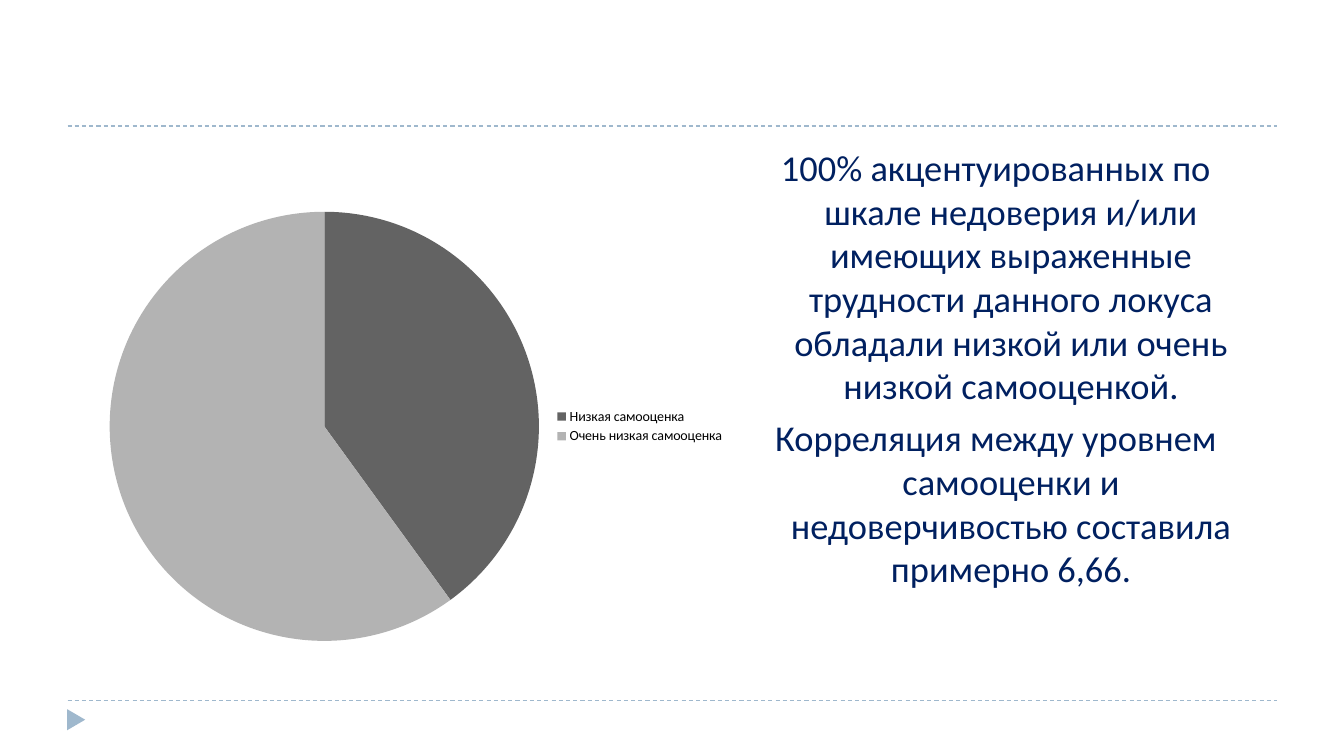
from lxml import etree
from pptx import Presentation
from pptx.chart.data import CategoryChartData
from pptx.dml.color import RGBColor
from pptx.enum.chart import XL_CHART_TYPE, XL_LEGEND_POSITION
from pptx.enum.dml import MSO_LINE
from pptx.enum.shapes import MSO_CONNECTOR, MSO_SHAPE
from pptx.enum.text import PP_ALIGN
from pptx.oxml.ns import qn
from pptx.util import Inches, Pt

PIE = XL_CHART_TYPE.PIE
LEGEND_RIGHT = XL_LEGEND_POSITION.RIGHT
DASH = MSO_LINE.DASH
STRAIGHT = MSO_CONNECTOR.STRAIGHT
TRIANGLE = MSO_SHAPE.ISOSCELES_TRIANGLE
CENTER = PP_ALIGN.CENTER

FONT = "Calibri"
ACCENT = "9FB8CD"
NAVY = "002060"
BLACK = "000000"
SLICES = [
    ("Низкая самооценка", 40, "636363"),
    ("Очень низкая самооценка", 60, "B3B3B3"),
]
FINDINGS = [
    "100% акцентуированных по шкале недоверия и/или имеющих выраженные "
    "трудности данного локуса обладали низкой или очень низкой самооценкой.",
    "Корреляция между уровнем самооценки и недоверчивостью составила примерно 6,66.",
]


def color(value):
    return RGBColor.from_string(value)


def format_font(font, size, font_color):
    for name, value in {"name": FONT, "size": Pt(size)}.items():
        setattr(font, name, value)
    font.color.rgb = color(font_color)


presentation = Presentation()
presentation.slide_width = Inches(13.33)
presentation.slide_height = Inches(7.5)
slide = presentation.slides.add_slide(presentation.slide_layouts[6])

# Dashed rules and the corner marker
for rule_top in (6.95, 1.25):
    rule = slide.shapes.add_connector(
        STRAIGHT, Inches(0.67), Inches(rule_top), Inches(12.67), Inches(rule_top))
    rule.line.color.rgb = color(ACCENT)
    rule.line.width = Pt(0.75)
    rule.line.dash_style = DASH
    etree.SubElement(rule._element.spPr, qn("a:effectLst"))

marker = slide.shapes.add_shape(
    TRIANGLE, Inches(0.65), Inches(7.05), Inches(0.21), Inches(0.18))
marker.rotation = 90
marker.shadow.inherit = False
marker.fill.solid()
marker.fill.fore_color.rgb = color(ACCENT)
marker.line.fill.background()

# Findings
findings = slide.shapes.add_textbox(
    Inches(7.25), Inches(1.39), Inches(5.26), Inches(5.4))
text_frame = findings.text_frame
text_frame.word_wrap = True
for index, finding in enumerate(FINDINGS):
    paragraph = text_frame.add_paragraph() if index else text_frame.paragraphs[0]
    paragraph.text = finding
    paragraph.alignment = CENTER
    paragraph.space_before = Pt(6 if index else 0)
    properties = paragraph._p.get_or_add_pPr()
    properties.set("marL", str(Inches(0.3)))
    properties.set("indent", str(Inches(-0.3)))
    format_font(paragraph.font, 26, NAVY)

# Self-esteem pie
chart_data = CategoryChartData()
chart_data.categories = [name for name, share, fill in SLICES]
chart_data.add_series("Series 1", [share for name, share, fill in SLICES])
chart = slide.shapes.add_chart(
    PIE, Inches(0.95), Inches(1.95), Inches(6.34), Inches(4.56), chart_data).chart
chart.has_title = False
chart.has_legend = True
chart.legend.position = LEGEND_RIGHT
chart.legend.include_in_layout = False
format_font(chart.font, 10, BLACK)
plot = chart.plots[0]
plot.vary_by_categories = True
for index, (name, share, fill) in enumerate(SLICES):
    point_format = plot.series[0].points[index].format
    point_format.fill.solid()
    point_format.fill.fore_color.rgb = color(fill)
    point_format.line.fill.background()

presentation.save("out.pptx")
